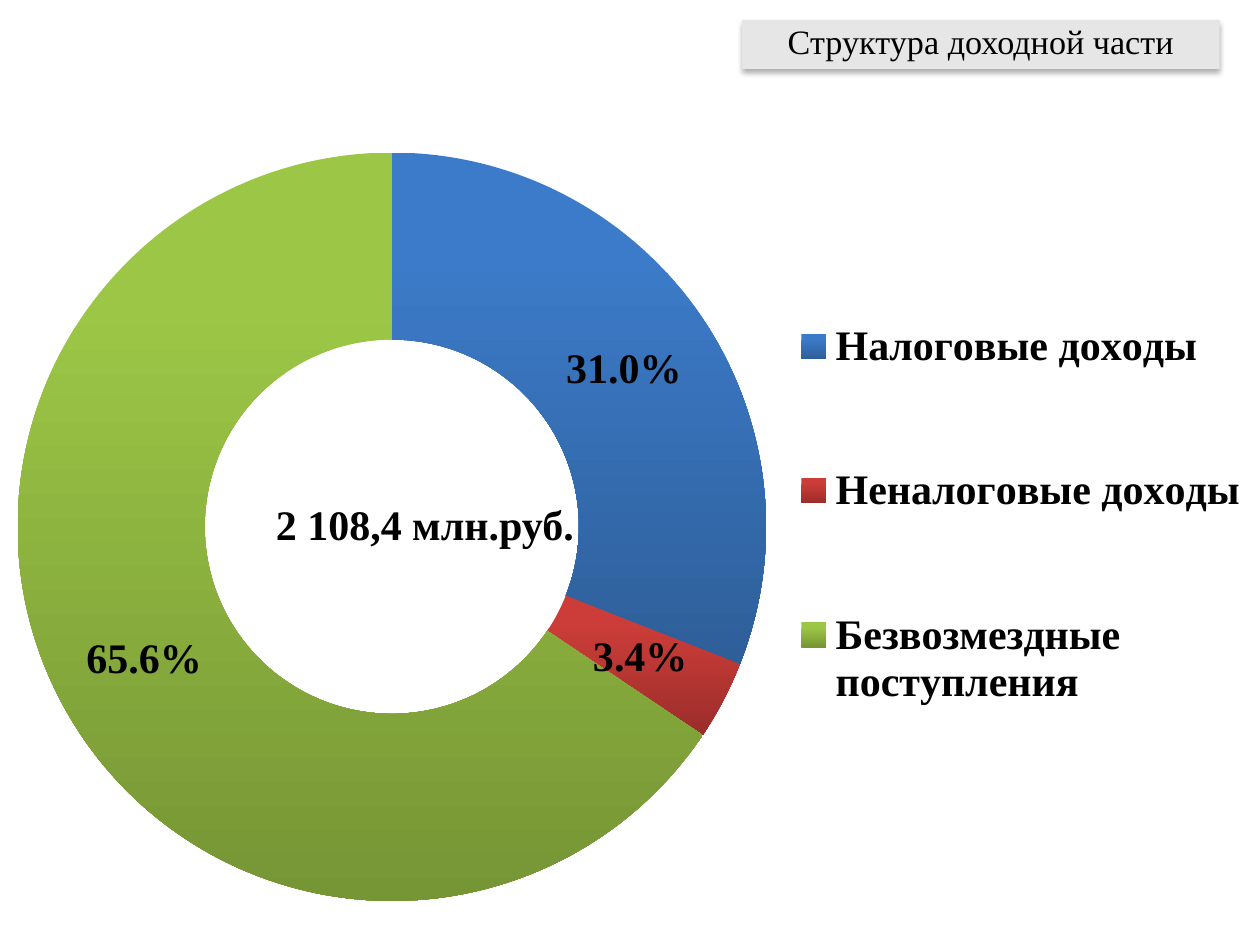
from lxml import etree
from pptx import Presentation
from pptx import util as u
from pptx.chart import data
from pptx.dml import color
from pptx.enum import chart as charts, shapes, text
from pptx.oxml import ns

# Content
TITLE = "Структура доходной части"
TOTAL = "2 108,4 млн.руб."
INCOME = [  # category, share in percent, gradient top and bottom
    ("Налоговые доходы", 31, ("3C7BC9", "2E5F99")),
    ("Неналоговые доходы", 3.4, ("CC3D39", "9B2D2A")),
    ("Безвозмездные поступления", 65.6, ("9CC746", "769535")),
]
THEME = {"font": "Times New Roman", "ink": "000000", "banner": "E6E6E6",
         "title_size": 19.5, "body_size": 24}

# Shares of the slide: left, top, width, height
WIDTH, HEIGHT = 10, 7.5
PLACES = {
    "banner": (0.589, 0.021, 0.379, 0.052),
    "total": (0.209, 0.521, 0.299, 0.067),
    "chart": (0, 0.115, 1, 0.885),
}
# Shares of the chart: left, top, width, height
RING = (0.014, 0.05, 0.594, 0.9)
LEGEND = (0.625, 0.14, 0.37, 0.69)


def rgb(value):
    return color.RGBColor.from_string(value)


def place(name):
    left, top, width, height = PLACES[name]
    return [u.Inches(length) for length in
            (left * WIDTH, top * HEIGHT, width * WIDTH, height * HEIGHT)]


def style(font, size, bold):
    values = {"name": THEME["font"], "size": u.Pt(size), "bold": bold}
    for name, value in values.items():
        setattr(font, name, value)
    font.color.rgb = rgb(THEME["ink"])


def write(box, words, size, bold, **para_format):
    para = box.text_frame.paragraphs[0]
    for name, value in para_format.items():
        setattr(para, name, value)
    span = para.add_run()
    span.text = words
    style(span.font, size, bold)


def add_shadow(shape):
    effects = etree.SubElement(shape.element.spPr, ns.qn("a:effectLst"))
    shadow = etree.SubElement(effects, ns.qn("a:outerShdw"), {
        "blurRad": str(u.Pt(3.5)), "dist": str(u.Pt(2.2)),
        "dir": "5400000", "rotWithShape": "0"})
    tint = etree.SubElement(shadow, ns.qn("a:srgbClr"), val=THEME["ink"])
    etree.SubElement(tint, ns.qn("a:alpha"), val="32000")


def set_layout(parent, shares, index, inner=False):
    for old in parent.findall(ns.qn("c:layout")):
        parent.remove(old)
    layout = etree.Element(ns.qn("c:layout"))
    manual = etree.SubElement(layout, ns.qn("c:manualLayout"))
    values = {"layoutTarget": "inner"} if inner else {}
    values.update(xMode="edge", yMode="edge")
    values.update(zip("xywh", shares))
    for name, value in values.items():
        etree.SubElement(manual, ns.qn("c:" + name), val=str(value))
    parent.insert(index, layout)


def add_banner(page):
    box = page.shapes.add_shape(shapes.MSO_SHAPE.RECTANGLE, *place("banner"))
    box.fill.solid()
    box.fill.fore_color.rgb = rgb(THEME["banner"])
    box.line.fill.background()
    add_shadow(box)
    box.text_frame.word_wrap = True
    box.text_frame.vertical_anchor = text.MSO_ANCHOR.MIDDLE
    write(box, TITLE, THEME["title_size"], False,
          alignment=text.PP_ALIGN.CENTER, line_spacing=0.8)


def add_total(page):
    box = page.shapes.add_textbox(*place("total"))
    box.text_frame.word_wrap = True
    box.text_frame.auto_size = text.MSO_AUTO_SIZE.SHAPE_TO_FIT_TEXT
    write(box, TOTAL, THEME["body_size"], True)


def add_ring(page):
    table = data.CategoryChartData()
    table.categories = [name for name, _, _ in INCOME]
    table.add_series("Series 1", [share for _, share, _ in INCOME])
    chart = page.shapes.add_chart(
        charts.XL_CHART_TYPE.DOUGHNUT, *place("chart"), table).chart
    chart.has_title = False
    style(chart.font, THEME["body_size"], True)

    # Legend and ring positions
    chart.has_legend = True
    chart.legend.position = charts.XL_LEGEND_POSITION.RIGHT
    chart.legend.include_in_layout = False
    set_layout(chart.legend._element, LEGEND, 1)
    area = chart._chartSpace.find(".//" + ns.qn("c:plotArea"))
    set_layout(area, RING, 0, inner=True)

    # Percent labels
    plot = chart.plots[0]
    plot.vary_by_categories = True
    plot.has_data_labels = True
    label_format = {"show_percentage": True, "show_value": False,
                    "number_format": "0.0%", "number_format_is_linked": False}
    for name, value in label_format.items():
        setattr(plot.data_labels, name, value)
    style(plot.data_labels.font, THEME["body_size"], True)

    # Slices shaded from top to bottom
    for index, (_, _, shades) in enumerate(INCOME):
        slice_format = plot.series[0].points[index].format
        slice_format.line.fill.background()
        slice_format.fill.gradient()
        slice_format.fill.gradient_angle = 270
        for stop, shade, position in zip(
                slice_format.fill.gradient_stops, shades, (0.2, 1)):
            stop.color.rgb = rgb(shade)
            stop.position = position


def main():
    deck = Presentation()
    deck.slide_width, deck.slide_height = u.Inches(WIDTH), u.Inches(HEIGHT)
    page = deck.slides.add_slide(deck.slide_layouts[6])
    add_banner(page)
    add_total(page)
    add_ring(page)
    deck.save("out.pptx")


if __name__ == "__main__":
    main()
